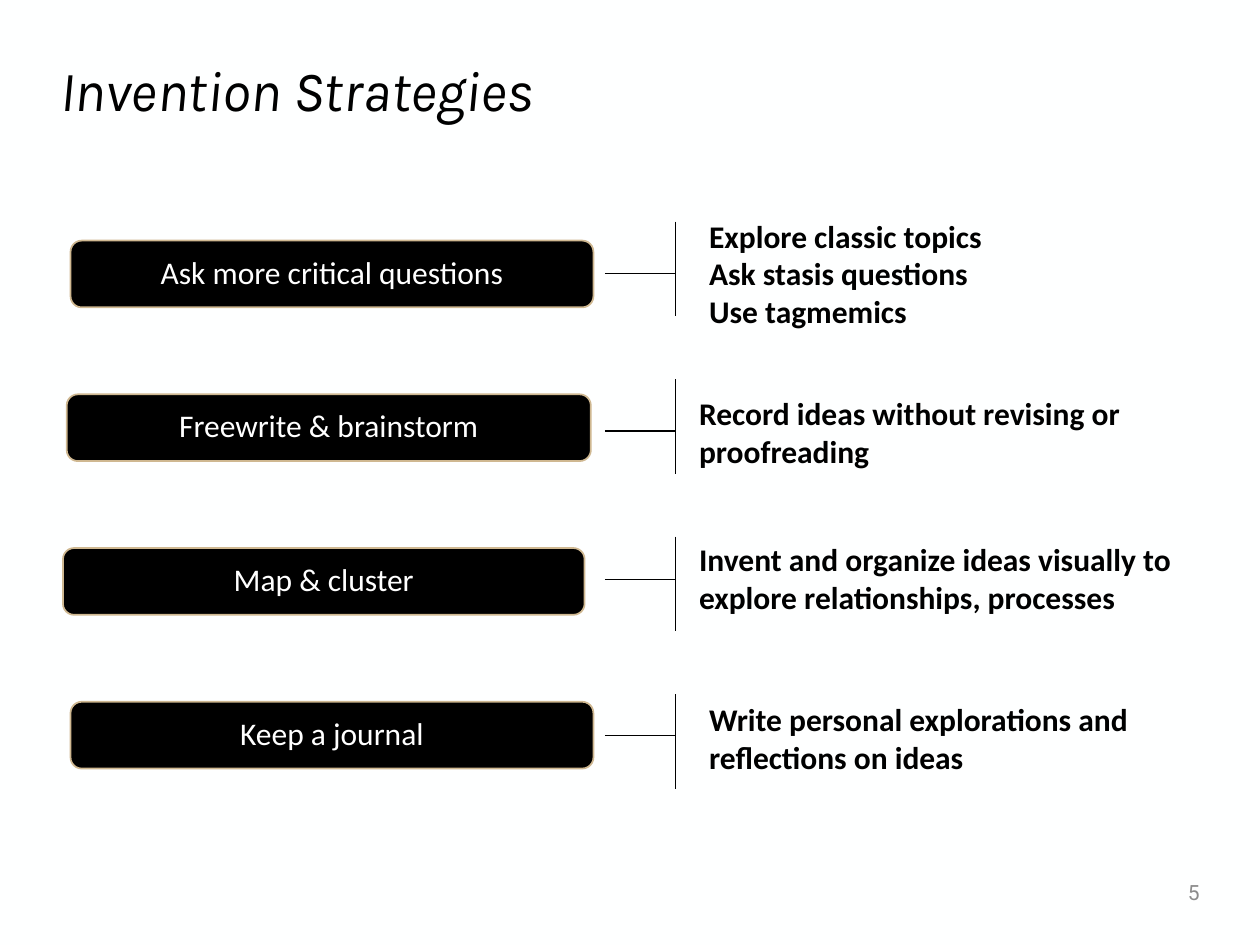
from pptx import Presentation
from pptx.dml.color import RGBColor
from pptx.enum.shapes import MSO_CONNECTOR, MSO_SHAPE
from pptx.enum.text import MSO_ANCHOR as ANCHOR, MSO_AUTO_SIZE as AUTO, PP_ALIGN as ALIGN
from pptx.oxml.ns import qn
from pptx.util import Inches, Pt
from lxml.etree import SubElement

BACKGROUND = RGBColor(0xFE, 0xFF, 0xFF)
BLACK = RGBColor(0x00, 0x00, 0x00)
WHITE = RGBColor(0xFF, 0xFF, 0xFF)
GOLD = RGBColor(0xCF, 0xB8, 0x91)
GRAY = RGBColor(0x8C, 0x8C, 0x8C)


class SlideBuilder:
    body_font = "Calibri"
    body_size = 18

    def __init__(self, slide):
        self.slide = slide
        fill = slide.background.fill
        fill.solid()
        fill.fore_color.rgb = BACKGROUND

    def style_text(self, tf, text, font=body_font, size=body_size, color=BLACK,
                   bold=False, italic=False, align=ALIGN.LEFT, spacing=None):
        tf.word_wrap = True
        tf.text = text
        for p in tf.paragraphs:
            p.alignment = align
            p.line_spacing = spacing
            for r in p.runs:
                r.font.name = font
                r.font.size = Pt(size)
                r.font.color.rgb = color
                r.font.bold = bold
                r.font.italic = italic

    def text(self, left, top, width, height, text, anchor=ANCHOR.MIDDLE, **style):
        box = self.slide.shapes.add_textbox(
            Inches(left), Inches(top), Inches(width), Inches(height))
        tf = box.text_frame
        self.style_text(tf, text, **style)
        tf.vertical_anchor = anchor
        return tf

    def description(self, left, top, width, height, text):
        tf = self.text(left, top, width, height, text, anchor=ANCHOR.TOP, bold=True)
        tf.auto_size = AUTO.SHAPE_TO_FIT_TEXT

    def strategy(self, left, top, width, text):
        sp = self.slide.shapes.add_shape(
            MSO_SHAPE.ROUNDED_RECTANGLE,
            Inches(left), Inches(top), Inches(width), Inches(0.53))
        sp.shadow.inherit = False
        sp.fill.solid()
        sp.fill.fore_color.rgb = BLACK
        sp.line.color.rgb = GOLD
        sp.line.width = Pt(1)
        tf = sp.text_frame
        tf.margin_left = tf.margin_right = Inches(0.14)
        tf.margin_top = tf.margin_bottom = Inches(0.14)
        tf.vertical_anchor = ANCHOR.MIDDLE
        self.style_text(tf, text, color=WHITE, align=ALIGN.CENTER, spacing=0.9)

    def line(self, x1, y1, x2, y2):
        connector = self.slide.shapes.add_connector(
            MSO_CONNECTOR.STRAIGHT, Inches(x1), Inches(y1), Inches(x2), Inches(y2))
        connector.line.color.rgb = BLACK
        connector.line.width = Pt(0.75)
        SubElement(connector._element.spPr, qn("a:effectLst"))

    def bracket(self, stem_y, bar_top):
        self.line(4.8, stem_y, 5.36, stem_y)
        self.line(5.36, bar_top, 5.36, bar_top + 0.75)


STRATEGIES = [
    ("Ask more critical questions", 0.56, 4.15, 2.17,
     "Explore classic topics\nAsk stasis questions\nUse tagmemics",
     (5.53, 1.67, 3.56, 1.01)),
    ("Freewrite & brainstorm", 0.53, 4.16, 3.42,
     "Record ideas without revising or proofreading",
     (5.45, 3.08, 3.97, 0.71)),
    ("Map & cluster", 0.5, 4.14, 4.6,
     "Invent and organize ideas visually to explore relationships, processes",
     (5.45, 4.24, 3.97, 0.71)),
    ("Keep a journal", 0.56, 4.15, 5.84,
     "Write personal explorations and reflections on ideas",
     (5.53, 5.51, 3.97, 0.71)),
]


def main():
    prs = Presentation()
    prs.slide_width = Inches(10)
    prs.slide_height = Inches(7.5)
    s = SlideBuilder(prs.slides.add_slide(prs.slide_layouts[6]))

    s.text(0.38, 0.42, 9.24, 0.64, "Invention Strategies",
           font="Karla", size=32.4, italic=True, spacing=0.9)
    s.text(8.42, 6.88, 1.2, 0.4, "5",
           font="Roboto", size=12, color=GRAY, align=ALIGN.RIGHT)

    for i, (name, left, width, stem_y, details, area) in enumerate(STRATEGIES):
        s.strategy(left, 1.91 + 1.22 * i, width, name)
        s.bracket(stem_y, 1.76 + 1.25 * i)
        s.description(*area, details)

    prs.save("out.pptx")


if __name__ == "__main__":
    main()
